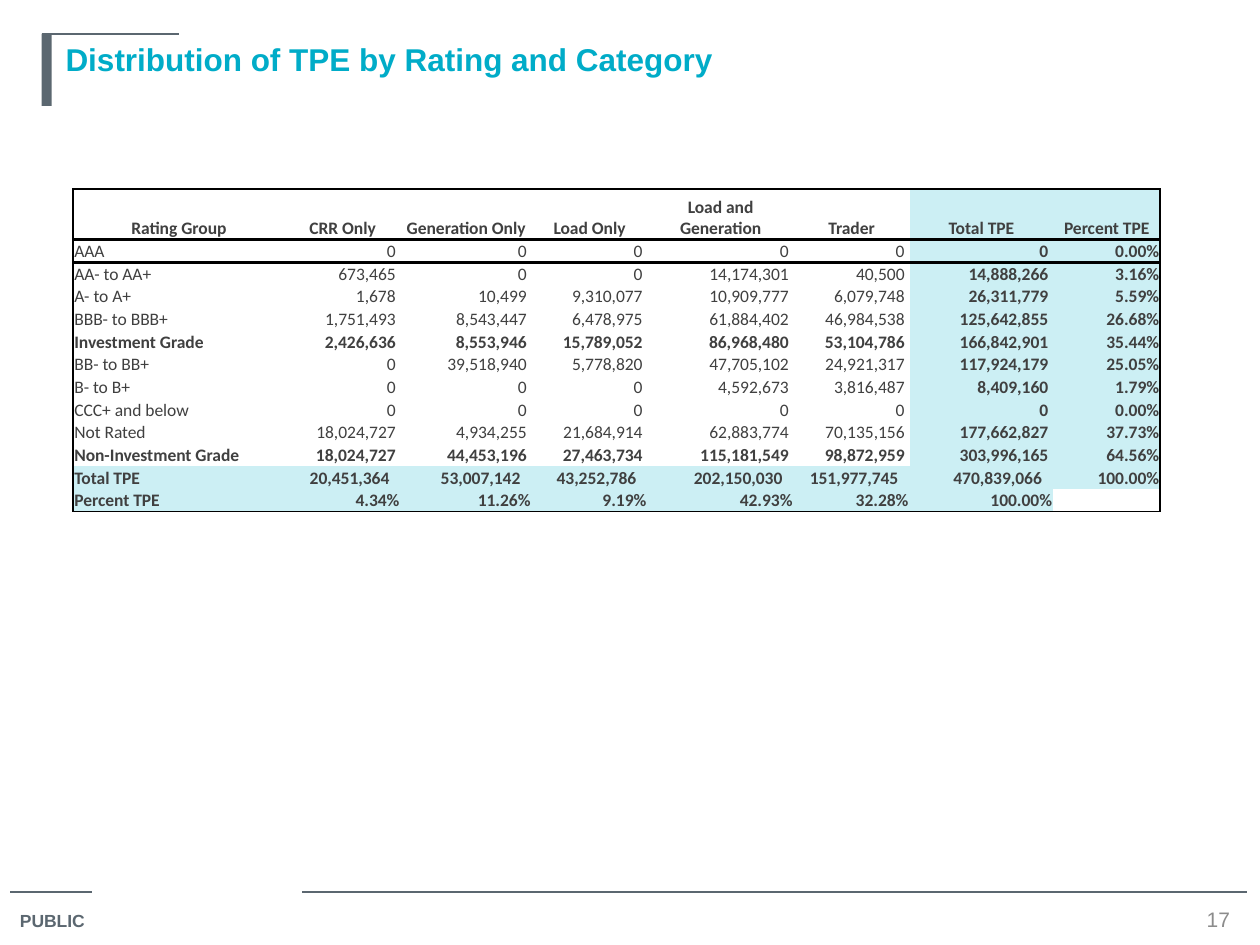
from lxml import etree
from pptx import Presentation
from pptx import util as u
from pptx.dml.color import RGBColor
from pptx.enum import shapes, text
from pptx.oxml.ns import qn

Inches = u.Inches
COLORS = {"slate": "5B6770", "teal": "00ACC8", "pale": "CCEFF4",
          "ink": "404040", "grey": "8C8C8C", "black": "000000"}


def style(span, name, size, color, bold=False):
    span.font.name = name
    span.font.size = u.Pt(size)
    span.font.bold = bold
    span.font.color.rgb = RGBColor.from_string(COLORS[color])


def add_border(cell, side, width):
    line = etree.SubElement(cell._tc.get_or_add_tcPr(), qn(f"a:ln{side}"), w=str(u.Pt(width)))
    fill = etree.SubElement(line, qn("a:solidFill"))
    etree.SubElement(fill, qn("a:srgbClr"), val=COLORS["black"])


deck = Presentation()
deck.slide_width, deck.slide_height = Inches(10), Inches(7.5)
page = deck.slides.add_slide(deck.slide_layouts[5])

for left, right, top in [(0.08, 0.73, 7.08), (2.4, 9.9, 7.08), (0.33, 1.42, 0.27)]:
    rule = page.shapes.add_connector(shapes.MSO_CONNECTOR.STRAIGHT, Inches(left), Inches(top),
                                     Inches(right), Inches(top))
    rule.line.color.rgb = RGBColor.from_string(COLORS["slate"])
    rule.line.width = u.Pt(0.75)
    etree.SubElement(rule._element.spPr, qn("a:effectLst"))

bar = page.shapes.add_shape(shapes.MSO_SHAPE.RECTANGLE, Inches(0.33), Inches(0.27),
                            Inches(0.08), Inches(0.57))
bar.shadow.inherit = False
bar.fill.solid()
bar.fill.fore_color.rgb = RGBColor.from_string(COLORS["slate"])
bar.line.fill.background()

title = page.shapes.title
title.left, title.top, title.width, title.height = map(Inches, (0.42, 0.27, 9.25, 1.25))
title.text_frame.text = "Distribution of TPE by Rating and Category"
title.text_frame.vertical_anchor = text.MSO_ANCHOR.TOP
title.text_frame.paragraphs[0].alignment = text.PP_ALIGN.LEFT
style(title.text_frame.paragraphs[0].runs[0], "Arial", 18, "teal", True)

marking = page.shapes.add_textbox(Inches(0.06), Inches(7.17), Inches(0.77), Inches(0.28))
marking.text_frame.text = "PUBLIC"
style(marking.text_frame.paragraphs[0].runs[0], "Arial", 10, "slate", True)

number = page.shapes.add_textbox(Inches(9.42), Inches(7.18), Inches(0.5), Inches(0.23))
number.text_frame.text = "17"
number.text_frame.word_wrap = True
number.text_frame.vertical_anchor = text.MSO_ANCHOR.MIDDLE
number.text_frame.paragraphs[0].alignment = text.PP_ALIGN.CENTER
style(number.text_frame.paragraphs[0].runs[0], "Arial", 12, "grey")

ROWS = [
    ["Rating Group", "CRR Only", "Generation Only", "Load Only", "Load and Generation",
     "Trader", "Total TPE", "Percent TPE"],
    ["AAA", "0", "0", "0", "0", "0", "0", "0.00%"],
    ["AA- to AA+", "673,465", "0", "0", "14,174,301", "40,500", "14,888,266", "3.16%"],
    ["A- to A+", "1,678", "10,499", "9,310,077", "10,909,777", "6,079,748", "26,311,779", "5.59%"],
    ["BBB- to BBB+", "1,751,493", "8,543,447", "6,478,975", "61,884,402", "46,984,538",
     "125,642,855", "26.68%"],
    ["Investment Grade", "2,426,636", "8,553,946", "15,789,052", "86,968,480", "53,104,786",
     "166,842,901", "35.44%"],
    ["BB- to BB+", "0", "39,518,940", "5,778,820", "47,705,102", "24,921,317",
     "117,924,179", "25.05%"],
    ["B- to B+", "0", "0", "0", "4,592,673", "3,816,487", "8,409,160", "1.79%"],
    ["CCC+ and below", "0", "0", "0", "0", "0", "0", "0.00%"],
    ["Not Rated", "18,024,727", "4,934,255", "21,684,914", "62,883,774", "70,135,156",
     "177,662,827", "37.73%"],
    ["Non-Investment Grade", "18,024,727", "44,453,196", "27,463,734", "115,181,549",
     "98,872,959", "303,996,165", "64.56%"],
    ["Total TPE", "20,451,364", "53,007,142", "43,252,786", "202,150,030", "151,977,745",
     "470,839,066", "100.00%"],
    ["Percent TPE", "4.34%", "11.26%", "9.19%", "42.93%", "32.28%", "100.00%", ""],
]
WIDTHS = [1.68, 0.92, 1.04, 0.92, 1.16, 0.92, 1.14, 0.85]
LAST_ROW, LAST_COL = len(ROWS) - 1, len(WIDTHS) - 1
TOTAL_ROW, TOTAL_COL = LAST_ROW - 1, LAST_COL - 1

frame = page.shapes.add_table(len(ROWS), len(WIDTHS), Inches(0.58), Inches(1.5),
                              Inches(8.63), Inches(2.6))
table = frame.table
table.first_row = table.horz_banding = False
table._tbl.tblPr.find(qn("a:tableStyleId")).text = "{2D5ABB26-0587-4C30-8999-92F81FD0307C}"
for column, width in zip(table.columns, WIDTHS):
    column.width = Inches(width)

for r, values in enumerate(ROWS):
    table.rows[r].height = Inches(0.4 if r == 0 else 0.18)
    for c, value in enumerate(values):
        cell = table.cell(r, c)
        cell.margin_left = cell.margin_right = cell.margin_top = Inches(0.01)
        cell.margin_bottom = 0
        cell.vertical_anchor = text.MSO_ANCHOR.BOTTOM
        if r > 0 and c > 0 and not value.endswith("%"):
            cell.margin_right = Inches(0.09 if r == TOTAL_ROW else 0.04)

        if c == 0:
            add_border(cell, "L", 1)
        if c == LAST_COL:
            add_border(cell, "R", 1)
        if r <= 1:
            add_border(cell, "T", 1 if r == 0 else 2)
        if r in (0, LAST_ROW):
            add_border(cell, "B", 2 if r == 0 else 1)

        if value and (r >= TOTAL_ROW or c >= TOTAL_COL):
            cell.fill.solid()
            cell.fill.fore_color.rgb = RGBColor.from_string(COLORS["pale"])
        else:
            cell.fill.background()

        para = cell.text_frame.paragraphs[0]
        if not value:
            para._p.get_or_add_endParaRPr().set("sz", "1000")
            continue
        para.text = value
        if r == 0:
            para.alignment = text.PP_ALIGN.CENTER
        elif c > 0:
            para.alignment = text.PP_ALIGN.RIGHT
        bold = r == 0 or r >= TOTAL_ROW or c >= TOTAL_COL or "Grade" in values[0]
        style(para.runs[0], "Calibri", 10, "ink", bold)

deck.save("out.pptx")
